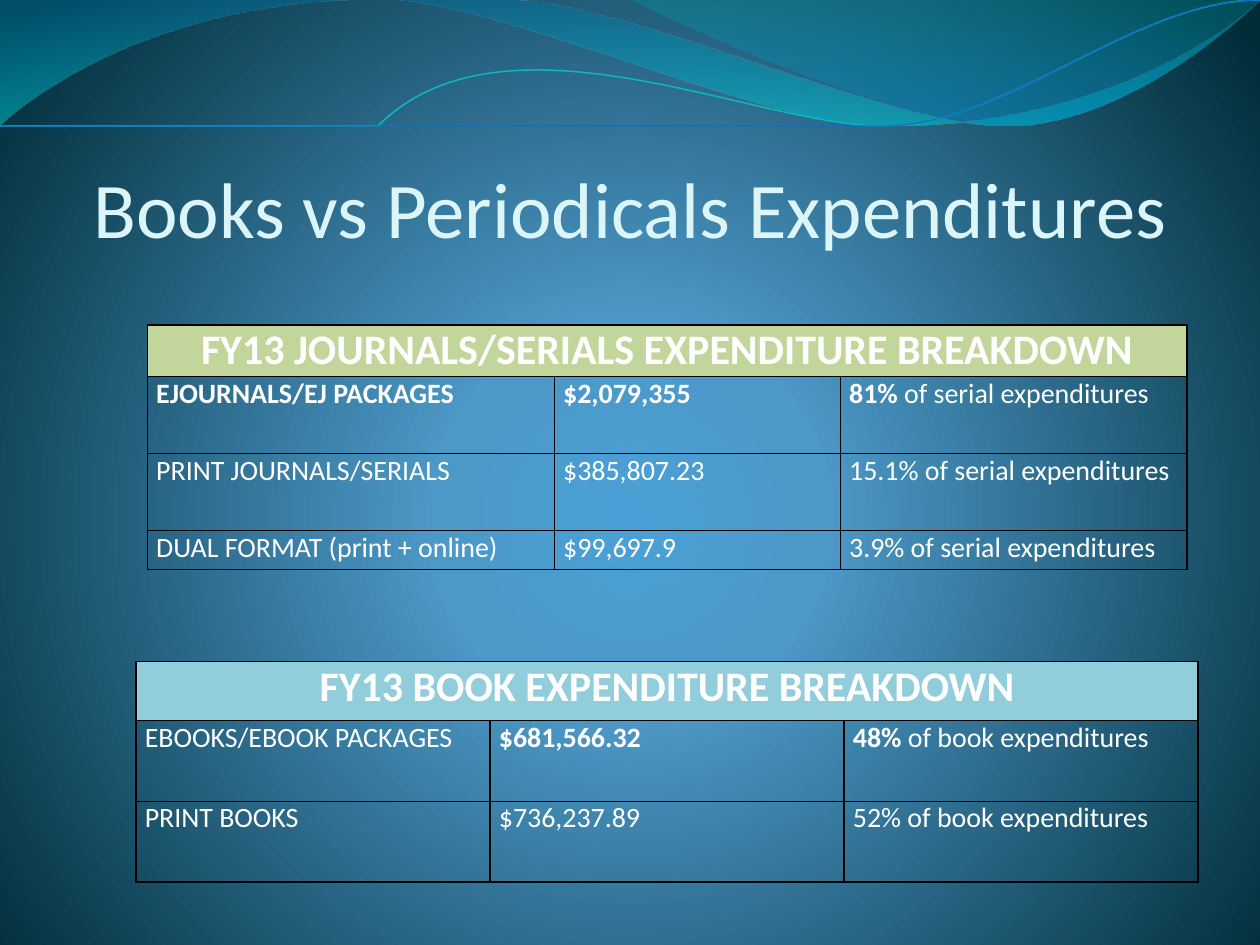
from pptx import Presentation
from pptx.dml.color import RGBColor
from pptx.enum import text as t
from pptx.oxml import parse_xml
from pptx.oxml.ns import nsdecls, qn
from pptx.util import Inches, Pt
from lxml import etree

FONT = "Calibri"
WHITE = RGBColor(0xFF, 0xFF, 0xFF)
BLACK = RGBColor(0, 0, 0)
ICE = RGBColor(0xDB, 0xF5, 0xF9)
GREEN = RGBColor(0xC2, 0xD6, 0x9B)
AQUA = RGBColor(0x92, 0xCD, 0xDC)
TEAL = RGBColor(0x0A, 0xB8, 0xBF)
BLUE = RGBColor(0x0F, 0x6F, 0xC6)

TITLE = "Books vs Periodicals Expenditures"

# Each cell is a list of (text, bold) runs
TABLES = [
    dict(header="FY13 BOOK EXPENDITURE BREAKDOWN", color=AQUA, at=(1.08, 5.25),
         cols=(2.81, 2.81, 2.81), rows=(0.47, 0.64, 0.64),
         body=[
             [[("EBOOKS/EBOOK PACKAGES", False)], [("$681,566.32", True)],
              [("48% ", True), ("of book expenditures", False)]],
             [[("PRINT BOOKS", False)], [("$736,237.89", False)],
              [("52% of book expenditures", False)]],
         ]),
    dict(header="FY13 JOURNALS/SERIALS EXPENDITURE BREAKDOWN", color=GREEN, at=(1.17, 2.58),
         cols=(3.23, 2.27, 2.75), rows=(0.41, 0.61, 0.61, 0.31),
         body=[
             [[("EJOURNALS/EJ PACKAGES", True)], [("$2,079,355", True)],
              [("81% ", True), ("of serial expenditures", False)]],
             [[("PRINT JOURNALS/SERIALS", False)], [("$385,807.23", False)],
              [("15.1% of serial expenditures", False)]],
             [[("DUAL FORMAT (print + online)", False)], [("$99,697.9", False)],
              [("3.9% of serial expenditures", False)]],
         ]),
]

# Gradient stops: (position %, colour, opacity %)
BACKDROP = [(0, "4AA0D6", 100), (25, "4C98C7", 100), (100, "002C38", 100)]
RADIAL = '<a:path path="circle"><a:fillToRect l="10000" t="110000" r="10000" b="100000"/></a:path>'
DOWNWARD = '<a:lin ang="5400000" scaled="0"/>'

# Outlines in inches: a segment of one point is a line, of three points a curve
WAVES = [
    ((0, 0),
     [[(4.4, -0.01)],
      [(4.76, 0.17), (6.64, 0.63), (7.58, 0.63)],
      [(8.53, 0.63), (9.58, 0.26), (10, 0.09)],
      [(10.01, 0.36)],
      [(9.83, 0.44), (8.7, 0.76), (7.46, 0.75)],
      [(6.22, 0.75), (3.82, 0.28), (2.57, 0.34)],
      [(1.29, 0.36), (0.46, 0.83), (-0.01, 1.13)]],
     [(0, "0074A1", 45), (100, "00C6CF", 55)]),
    ((4.79, -0.01),
     [[(5.09, 0.11), (6.82, 0.62), (7.69, 0.65)],
      [(8.56, 0.69), (9.61, 0.32), (10, 0.21)],
      [(10, 0)]],
     [(0, "00A1A9", 30), (80, "008BBF", 45)]),
]
STRANDS = [
    ((0, 1.11),
     [[(0.48, 0.93), (1.58, 0.57), (2.77, 0.52)],
      [(3.95, 0.47), (5.93, 0.89), (7.13, 0.8)],
      [(8.33, 0.71), (9.38, 0.15), (9.98, -0.02)]],
     TEAL, 0.85),
    ((0, 1.04),
     [[(0.47, 0.96), (1.64, 0.61), (2.83, 0.56)],
      [(4.03, 0.51), (5.97, 0.84), (7.17, 0.75)],
      [(8.36, 0.67), (9.41, 0.21), (10, 0.06)]],
     BLUE, 0.75),
]


def gradient(stops, direction):
    marks = "".join(
        f'<a:gs pos="{pos * 1000}"><a:srgbClr val="{color}">'
        f'<a:alpha val="{opacity * 1000}"/></a:srgbClr></a:gs>'
        for pos, color, opacity in stops)
    return parse_xml(f'<a:gradFill {nsdecls("a")} rotWithShape="1">'
                     f'<a:gsLst>{marks}</a:gsLst>{direction}</a:gradFill>')


def replace_solid(parent, fill):
    parent.replace(parent.find(qn("a:solidFill")), fill)


def add_outline(slide, start, segments, closed):
    """Draw through every point, then turn three-point segments into curves."""
    builder = slide.shapes.build_freeform(*start, scale=Inches(1))
    builder.add_line_segments([p for seg in segments for p in seg], close=closed)
    outline = builder.convert_to_shape()
    outline.shadow.inherit = False
    steps = iter(outline.element.findall(".//" + qn("a:lnTo")))
    for segment in segments:
        legs = [next(steps) for _ in segment]
        if len(legs) == 3:
            curve = etree.Element(qn("a:cubicBezTo"))
            legs[0].addprevious(curve)
            for leg in legs:
                curve.append(leg[0])
                leg.getparent().remove(leg)
    return outline


def add_run(paragraph, words, size, color, bold=False):
    run = paragraph.add_run()
    run.text = words
    font = run.font
    font.name, font.size, font.bold = FONT, Pt(size), bold
    font.color.rgb = color


def style_cell(cell, fill=None):
    cell.margin_left = cell.margin_right = Inches(0.07)
    cell.margin_top = cell.margin_bottom = 0
    if fill is None:
        cell.fill.background()
    else:
        cell.fill.solid()
        cell.fill.fore_color.rgb = fill
    for i, side in enumerate("LRTB"):
        cell._tc.get_or_add_tcPr().insert(i, parse_xml(
            f'<a:ln{side} {nsdecls("a")} w="{Pt(1)}"><a:solidFill>'
            f'<a:srgbClr val="{BLACK}"/></a:solidFill></a:ln{side}>'))


def add_breakdown(slide, header, color, at, cols, rows, body):
    left, top = at
    table = slide.shapes.add_table(
        len(rows), len(cols), Inches(left), Inches(top),
        Inches(sum(cols)), Inches(sum(rows))).table
    table.first_row = table.horz_banding = False
    for column, width in zip(table.columns, cols):
        column.width = Inches(width)
    for row, height in zip(table.rows, rows):
        row.height = Inches(height)
    # Header across all columns
    for cell in table.rows[0].cells:
        style_cell(cell, color)
    table.cell(0, 0).merge(table.cell(0, len(cols) - 1))
    heading = table.cell(0, 0).text_frame.paragraphs[0]
    heading.alignment = t.PP_ALIGN.CENTER
    add_run(heading, header, 24, WHITE, True)
    # Expenditure lines
    for r, line in enumerate(body, 1):
        for c, runs in enumerate(line):
            cell = table.cell(r, c)
            style_cell(cell)
            for words, bold in runs:
                add_run(cell.text_frame.paragraphs[0], words, 16, WHITE, bold)


def main():
    prs = Presentation()
    prs.slide_width, prs.slide_height = Inches(10), Inches(7.5)
    slide = prs.slides.add_slide(prs.slide_layouts[6])

    # Background
    slide.background.fill.solid()
    replace_solid(slide.element.find(".//" + qn("p:bgPr")), gradient(BACKDROP, RADIAL))

    # Waves and strands along the top
    for start, segments, stops in WAVES:
        wave = add_outline(slide, start, segments, True)
        wave.line.fill.background()
        wave.fill.solid()
        replace_solid(wave.element.spPr, gradient(stops, DOWNWARD))
    for start, segments, color, width in STRANDS:
        strand = add_outline(slide, start, segments, False)
        strand.fill.background()
        strand.line.color.rgb = color
        strand.line.width = Pt(width)

    # Title
    frame = slide.shapes.add_textbox(Inches(0.5), Inches(0.77), Inches(9), Inches(1.25)).text_frame
    frame.word_wrap = True
    frame.vertical_anchor = t.MSO_ANCHOR.BOTTOM
    frame.margin_left = frame.margin_right = frame.margin_bottom = 0
    frame.paragraphs[0].alignment = t.PP_ALIGN.CENTER
    add_run(frame.paragraphs[0], TITLE, 45, ICE)

    # Tables
    for breakdown in TABLES:
        add_breakdown(slide, **breakdown)

    prs.save("out.pptx")


if __name__ == "__main__":
    main()
